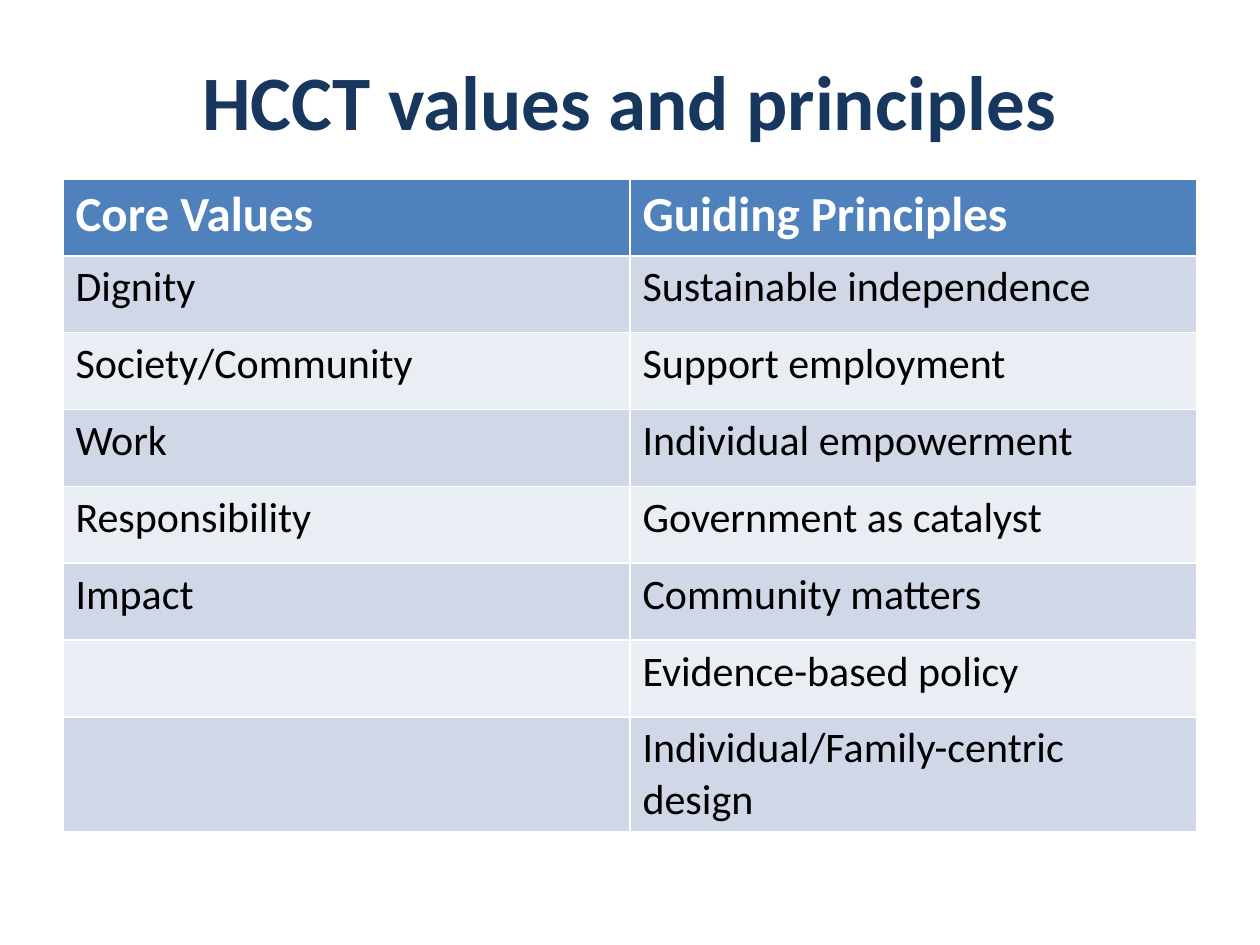
"""Build the HCCT values and principles slide."""
from pptx import Presentation
from pptx.dml.color import RGBColor
from pptx.enum import text
from pptx.util import Inches, Pt

TITLE = "HCCT values and principles"
ROWS = [
    ("Core Values", "Guiding Principles"),
    ("Dignity", "Sustainable independence"),
    ("Society/Community", "Support employment"),
    ("Work", "Individual empowerment"),
    ("Responsibility", "Government as catalyst"),
    ("Impact", "Community matters"),
    ("", "Evidence-based policy"),
    ("", "Individual/Family-centric design"),
]
HEX = {"navy": "17375E", "blue": "4F81BD", "dark": "D0D8E8",
       "light": "E9EDF4", "white": "FFFFFF", "black": "000000"}
FONTS = {
    "title": {"size": Pt(44), "bold": True, "color": "navy"},
    "head": {"size": Pt(28), "bold": True, "color": "white"},
    "body": {"size": Pt(24), "bold": False, "color": "black"},
}
LEFT, WIDTH, ROW = 0.5, 9, 0.61


def color(name):
    return RGBColor.from_string(HEX[name])


def style(para, kind):
    font = para.font
    font.name = "Calibri"
    for key, value in FONTS[kind].items():
        if key == "color":
            font.color.rgb = color(value)
        else:
            setattr(font, key, value)


def add_title(slide):
    title = slide.shapes.title
    place = {"left": LEFT, "top": 0.17, "width": WIDTH, "height": 1.25}
    for key, value in place.items():
        setattr(title, key, Inches(value))
    frame = title.text_frame
    frame.text = TITLE
    frame.vertical_anchor = text.MSO_ANCHOR.MIDDLE
    para = frame.paragraphs[0]
    para.alignment = text.PP_ALIGN.CENTER
    style(para, "title")


def add_grid(slide):
    count = len(ROWS)
    grid = slide.shapes.add_table(
        count, len(ROWS[0]), Inches(LEFT), Inches(1.42),
        Inches(WIDTH), Inches(ROW * count)).table
    for r, row in enumerate(ROWS):
        grid.rows[r].height = Inches(ROW)
        fill = "blue" if r == 0 else ("light", "dark")[r % 2]
        for c, words in enumerate(row):
            cell = grid.cell(r, c)
            cell.fill.solid()
            cell.fill.fore_color.rgb = color(fill)
            cell.text = words
            style(cell.text_frame.paragraphs[0], "body" if r else "head")


def main():
    deck = Presentation()
    deck.slide_width, deck.slide_height = Inches(10), Inches(7.5)
    slide = deck.slides.add_slide(deck.slide_layouts[5])
    add_title(slide)
    add_grid(slide)
    deck.save("out.pptx")


if __name__ == "__main__":
    main()
